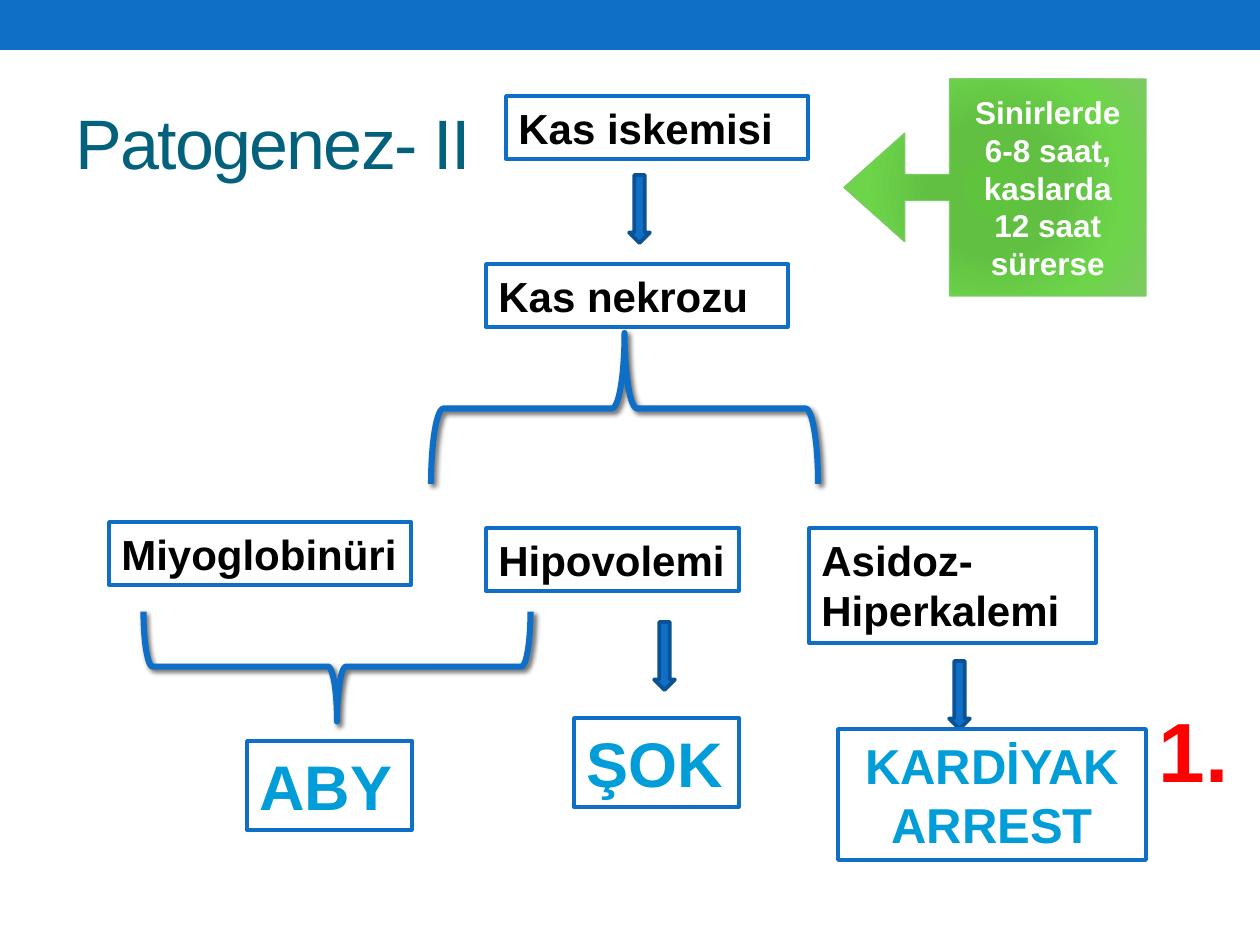
"""Build the slide on the pathogenesis of muscle ischaemia."""
import pptx
import pptx.dml.color
import pptx.enum.shapes
import pptx.enum.text
import pptx.oxml
import pptx.util

SCALE = 914400 / 126
SHAPES = pptx.enum.shapes.MSO_SHAPE
ALIGN = pptx.enum.text.PP_ALIGN
MIDDLE = pptx.enum.text.MSO_ANCHOR.MIDDLE
DRAWING = 'xmlns:a="http://schemas.openxmlformats.org/drawingml/2006/main"'
BLUE, DARK_BLUE, CYAN = "0F6FC6", "0B5292", "009DD9"
BLACK, WHITE, RED, GREEN = "000000", "FFFFFF", "FF0000", "7CCA62"
GRADIENT = [(0, "5FC33E"), (34, "61BF42"), (70, "6DD54A"), (100, GREEN)]


def px(*lengths):
    """Turn whole px into EMU."""
    return [round(length * SCALE) for length in lengths]


def color(hex_string):
    """Turn a hex string into a colour."""
    return pptx.dml.color.RGBColor.from_string(hex_string)


def write(shape, text, size, font_color, bold=True, align=ALIGN.LEFT, anchor=None):
    """Put one formatted paragraph into a shape."""
    frame = shape.text_frame
    frame.word_wrap = True
    frame.vertical_anchor = anchor or pptx.enum.text.MSO_ANCHOR.TOP
    frame.text = text
    paragraph = frame.paragraphs[0]
    paragraph.alignment = align
    font = paragraph.font
    font.name, font.size, font.bold = "Arial", pptx.util.Pt(size), bold
    font.color.rgb = color(font_color)


def add_shape(slide, kind, bounds, fill=None, line=None, line_width=2.08):
    """Add a preset shape with its fill and line."""
    shape = slide.shapes.add_shape(kind, *px(*bounds))
    shape.shadow.inherit = False
    if fill:
        shape.fill.solid()
        shape.fill.fore_color.rgb = color(fill)
    else:
        shape.fill.background()
    if line:
        shape.line.color.rgb = color(line)
        shape.line.width = pptx.util.Pt(line_width)
    else:
        shape.line.fill.background()
    return shape


def add_title(slide, text):
    """Fill and place the title placeholder."""
    title = slide.shapes.title
    title.left, title.top, title.width, title.height = px(63, 73, 1134, 136)
    write(title, text, 40, "04617B", bold=False, anchor=MIDDLE)
    title.text_frame.paragraphs[0].runs[0].font._element.set("spc", "-100")


def add_box(slide, text, bounds, size=24, font_color=BLACK, align=ALIGN.LEFT):
    """Add a white outlined box with bold text."""
    box = add_shape(slide, SHAPES.RECTANGLE, bounds, WHITE, BLUE)
    write(box, text, size, font_color, align=align)


def add_down_arrow(slide, left, top):
    """Add a small arrow pointing down."""
    add_shape(slide, SHAPES.DOWN_ARROW, (left, top, 21, 68), BLUE, DARK_BLUE)


def add_brace(slide, bounds, rotation):
    """Add a turned brace with a soft shadow."""
    brace = add_shape(slide, SHAPES.LEFT_BRACE, bounds, line=BLUE, line_width=3.5)
    brace.rotation = rotation
    effects = brace._element.spPr.find(pptx.oxml.ns.qn("a:effectLst"))
    effects.append(pptx.oxml.parse_xml(
        f'<a:outerShdw {DRAWING} blurRad="38100" dist="25400" dir="2700000" rotWithShape="0">'
        f'<a:srgbClr val="{BLACK}"><a:alpha val="60000"/></a:srgbClr></a:outerShdw>'))


def add_callout(slide, text, bounds):
    """Add the green arrow callout with a radial gradient."""
    callout = add_shape(slide, SHAPES.LEFT_ARROW_CALLOUT, bounds, GREEN, GREEN, 0.75)
    for index, value in enumerate((0.12, 0.25, 0.28, 0.65)):
        callout.adjustments[index] = value
    stops = "".join(
        f'<a:gs pos="{position * 1000}"><a:srgbClr val="{stop}"/></a:gs>'
        for position, stop in GRADIENT)
    gradient = pptx.oxml.parse_xml(
        f'<a:gradFill {DRAWING} rotWithShape="1"><a:gsLst>{stops}</a:gsLst><a:path path="circle">'
        '<a:fillToRect l="100000" t="100000" r="100000" b="100000"/></a:path></a:gradFill>')
    properties = callout._element.spPr
    properties.replace(properties.find(pptx.oxml.ns.qn("a:solidFill")), gradient)
    write(callout, text, 18, WHITE, align=ALIGN.CENTER, anchor=MIDDLE)


def main():
    """Build and save the slide."""
    presentation = pptx.Presentation()
    presentation.slide_width, presentation.slide_height = px(1260, 945)
    slide = presentation.slides.add_slide(presentation.slide_layouts[5])
    add_shape(slide, SHAPES.RECTANGLE, (0, 0, 1260, 50), BLUE)
    add_title(slide, "Patogenez- II")

    add_box(slide, "Kas iskemisi", (506, 96, 302, 63))
    add_down_arrow(slide, 629, 175)
    add_box(slide, "Kas nekrozu", (486, 264, 302, 63))
    add_brace(slide, (549, 215, 151, 387), 90)

    add_box(slide, "Asidoz- Hiperkalemi", (809, 528, 287, 115))
    add_box(slide, "Hipovolemi", (486, 528, 253, 63))
    add_box(slide, "Miyoglobinüri", (109, 522, 302, 63))
    add_down_arrow(slide, 949, 661)
    add_down_arrow(slide, 654, 622)
    add_brace(slide, (282, 473, 110, 387), 270)

    add_box(slide, "KARDİYAK ARREST", (838, 729, 308, 131), 28, CYAN, ALIGN.CENTER)
    add_box(slide, "ŞOK", (574, 718, 165, 89), 36, CYAN)
    add_box(slide, "ABY", (247, 741, 165, 89), 36, CYAN)

    add_callout(slide, "Sinirlerde 6-8 saat, kaslarda 12 saat sürerse", (844, 79, 302, 217))
    rank = slide.shapes.add_textbox(*px(1146, 692, 114, 115))
    write(rank, "1.", 48, RED)
    presentation.save("out.pptx")


if __name__ == "__main__":
    main()
